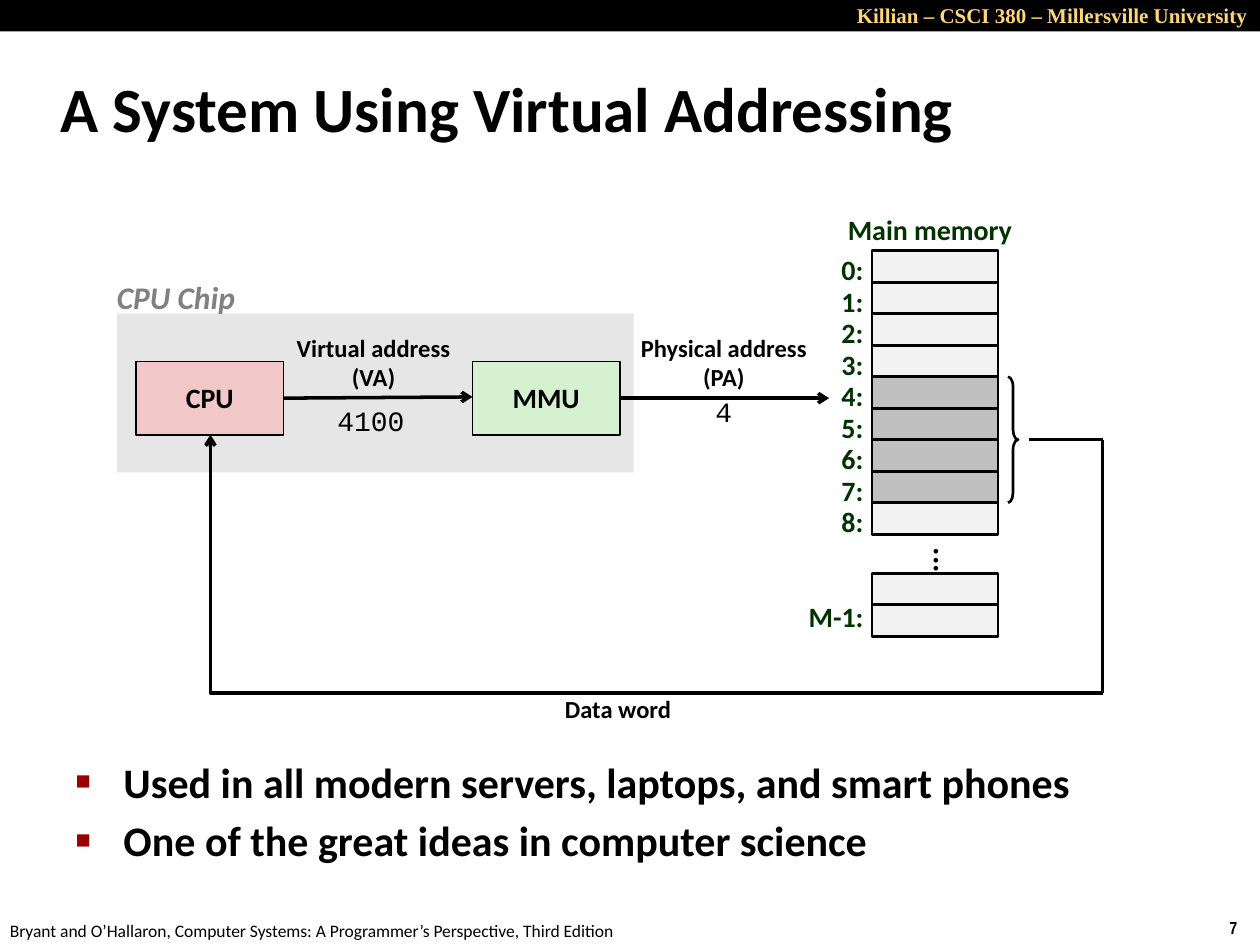
from lxml import etree
from pptx import Presentation
from pptx.dml.color import RGBColor
from pptx.enum.shapes import MSO_CONNECTOR as CONN, MSO_SHAPE as SHAPE
from pptx.enum.text import MSO_ANCHOR as ANCHOR, MSO_AUTO_SIZE as AUTO, PP_ALIGN as ALIGN
from pptx.oxml.ns import qn
from pptx.util import Emu, Pt

PX = 9144  # 100 px to the inch

BLACK = RGBColor(0x00, 0x00, 0x00)
GOLD = RGBColor(0xFF, 0xD5, 0x79)
CHIP_GRAY = RGBColor(0xE6, 0xE6, 0xE6)
TEXT_GRAY = RGBColor(0x80, 0x80, 0x80)
CELL_LIGHT = RGBColor(0xF2, 0xF2, 0xF2)
CELL_DARK = RGBColor(0xC0, 0xC0, 0xC0)
MMU_GREEN = RGBColor(0xD5, 0xF1, 0xCF)
CPU_PINK = RGBColor(0xF1, 0xC7, 0xC7)
DARK_GREEN = RGBColor(0x00, 0x33, 0x00)
BULLET_RED = RGBColor(0x99, 0x00, 0x00)


def px(*lengths):
    return [Emu(n * PX) for n in lengths]


def add_run(p, text, size, color=BLACK, font="Calibri", bold=True, italic=False):
    r = p.add_run()
    r.text = text
    f = r.font
    f.name, f.size, f.bold, f.italic = font, Pt(size), bold, italic
    f.color.rgb = color


def add_label(slide, box, lines, size, align=ALIGN.LEFT, anchor=ANCHOR.TOP,
              spacing=None, before=0, wrap=False, **style):
    sp = slide.shapes.add_textbox(*px(*box))
    tf = sp.text_frame
    tf.word_wrap = wrap
    tf.auto_size = AUTO.SHAPE_TO_FIT_TEXT
    tf.vertical_anchor = anchor
    for i, line in enumerate(lines):
        p = tf.paragraphs[0] if i == 0 else tf.add_paragraph()
        p.alignment = align
        p.line_spacing = spacing
        p.space_before = Pt(before)
        add_run(p, line, size, **style)
    return sp


def add_box(slide, box, fill=None, line_width=0, shape=SHAPE.RECTANGLE):
    sp = slide.shapes.add_shape(shape, *px(*box))
    sp.shadow.inherit = False
    if fill is None:
        sp.fill.background()
    else:
        sp.fill.solid()
        sp.fill.fore_color.rgb = fill
    if line_width:
        sp.line.color.rgb = BLACK
        sp.line.width = Pt(line_width)
    else:
        sp.line.fill.background()
    return sp


def add_line(slide, start, end, arrow=False, kind=CONN.STRAIGHT):
    cx = slide.shapes.add_connector(kind, *px(*start, *end))
    cx.line.color.rgb = BLACK
    cx.line.width = Pt(2)
    if arrow:
        etree.SubElement(cx.line._get_or_add_ln(), qn("a:tailEnd"), type="arrow")
    etree.SubElement(cx._element.spPr, qn("a:effectLst"))
    return cx


def add_unit(slide, box, name, fill):
    """Processor part: an outlined box with its name in the middle."""
    tf = add_box(slide, box, fill, 1).text_frame
    tf.word_wrap = False
    tf.vertical_anchor = ANCHOR.MIDDLE
    p = tf.paragraphs[0]
    p.alignment = ALIGN.CENTER
    p.line_spacing = 0.98
    add_run(p, name, 16)


def add_header_footer(slide, width, height):
    add_label(slide, (width - 34, height - 27, 34, 27), ["7"], 10, font="Arial Narrow")
    add_label(slide, (-2, height - 25, 508, 27),
              ["Bryant and O’Hallaron, Computer Systems: A Programmer’s Perspective, Third Edition"],
              10, bold=False)
    add_box(slide, (0, 0, width, 25), BLACK)
    add_label(slide, (width - 331, -3, 331, 30), ["Killian – CSCI 380 – Millersville University"],
              12, ALIGN.RIGHT, wrap=True, color=GOLD, font="Times New Roman")


def place(sp, box):
    sp.left, sp.top, sp.width, sp.height = px(*box)
    sp.text_frame.auto_size = AUTO.NONE
    return sp.text_frame


def fill_title(slide, box, text):
    tf = place(slide.shapes.title, box)
    tf.vertical_anchor = ANCHOR.MIDDLE
    p = tf.paragraphs[0]
    p.alignment = ALIGN.LEFT
    add_run(p, text, 36)


def fill_bullets(slide, box, items):
    tf = place(slide.placeholders[1], box)
    for i, item in enumerate(items):
        p = tf.paragraphs[0] if i == 0 else tf.add_paragraph()
        add_run(p, item, 24)
        pPr = p._p.get_or_add_pPr()
        pPr.set("marL", str(38 * PX))
        pPr.set("indent", str(-38 * PX))
        before = etree.SubElement(pPr, qn("a:spcBef"))
        etree.SubElement(before, qn("a:spcPct"), val="20000")
        color = etree.SubElement(pPr, qn("a:buClr"))
        etree.SubElement(color, qn("a:srgbClr"), val=str(BULLET_RED))
        etree.SubElement(pPr, qn("a:buSzPct"), val="60000")
        etree.SubElement(pPr, qn("a:buChar"), char="■")


def add_chip(slide, x, y, w, h):
    add_box(slide, (x, y, w, h), CHIP_GRAY)
    add_label(slide, (x - 10, y - 33, 116, 40), ["CPU Chip"], 18, color=TEXT_GRAY, italic=True)
    add_unit(slide, (x + 15, y + 38, 117, 58), "CPU", CPU_PINK)
    add_unit(slide, (x + 282, y + 38, 117, 58), "MMU", MMU_GREEN)


def add_memory(slide, x, y, w, row):
    """Column of cells with addresses; a word of four cells is shaded and braced."""
    tag = dict(spacing=0.88, before=6, color=DARK_GREEN)
    add_label(slide, (x - 30, y - 32, 152, 33), ["Main memory"], 16, ALIGN.CENTER, **tag)
    word = range(4, 8)
    for i in range(9):
        top = y + i * row
        add_box(slide, (x, top, w, row), CELL_DARK if i in word else CELL_LIGHT, 1.5)
        add_label(slide, (x - 34, top, 37, 33), [f"{i}:"], 16, **tag)

    dots = add_label(slide, (x + 8, y + 226, w, row), ["..."], 18, ALIGN.CENTER,
                     ANCHOR.MIDDLE, 0.98)
    dots.text_frame.auto_size = AUTO.NONE
    dots.text_frame._txBody.bodyPr.set("vert", "eaVert")
    dots.text_frame.paragraphs[0]._p.get_or_add_pPr().set("rtl", "1")

    last = y + 281
    for top in (last - row, last):
        add_box(slide, (x, top, w, row), CELL_LIGHT, 1.5)
    add_label(slide, (x - 60, last - 6, 64, 33), ["M-1:"], 16, **tag)

    brace = add_box(slide, (x + w + 8, y + word[0] * row, 8, len(word) * row),
                    line_width=1.5, shape=SHAPE.RIGHT_BRACE)
    brace.adjustments[0] = 1
    brace.adjustments[1] = 0.5


def add_address(slide, start, end, box, lines, value_box, value):
    add_line(slide, start, end, arrow=True)
    add_label(slide, box, lines, 14, ALIGN.CENTER, ANCHOR.MIDDLE, 0.98)
    add_label(slide, value_box, [value], 16, font="Courier New", bold=False)


def add_data_path(slide, left, top, right, bottom):
    """Way of the data word from the brace round to the CPU."""
    add_line(slide, (right - 58, top + 4), (right, top + 4))
    add_line(slide, (right, top + 4), (right, bottom))
    # Turned half round, the elbow starts bottom right and ends top left.
    elbow = add_line(slide, (left, top), (right, bottom), arrow=True, kind=CONN.ELBOW)
    elbow._element.spPr.find(qn("a:prstGeom")).set("prst", "bentConnector2")
    elbow._element.spPr.find(qn("a:xfrm")).set("rot", str(180 * 60000))
    add_label(slide, (left + 271, bottom - 3, 105, 33), ["Data word"], 14, ALIGN.CENTER,
              ANCHOR.MIDDLE, 0.98)


def main():
    prs = Presentation()
    prs.slide_width, prs.slide_height = px(1000, 750)
    slide = prs.slides.add_slide(prs.slide_layouts[1])
    add_header_footer(slide, 1000, 750)
    fill_title(slide, (38, 42, 953, 86), "A System Using Virtual Addressing")
    fill_bullets(slide, (50, 595, 909, 138),
                 ["Used in all modern servers, laptops, and smart phones",
                  "One of the great ideas in computer science"])
    add_chip(slide, 93, 249, 410, 126)
    add_memory(slide, 692, 199, 100, 25)
    add_address(slide, (225, 316), (375, 315), (225, 260, 143, 57),
                ["Virtual address", "(VA)"], (258, 315, 74, 37), "4100")
    add_address(slide, (492, 316), (658, 316), (498, 260, 153, 57),
                ["Physical address", "(PA)"], (558, 308, 34, 37), "4")
    add_data_path(slide, 167, 345, 875, 550)
    prs.save("out.pptx")


if __name__ == "__main__":
    main()
